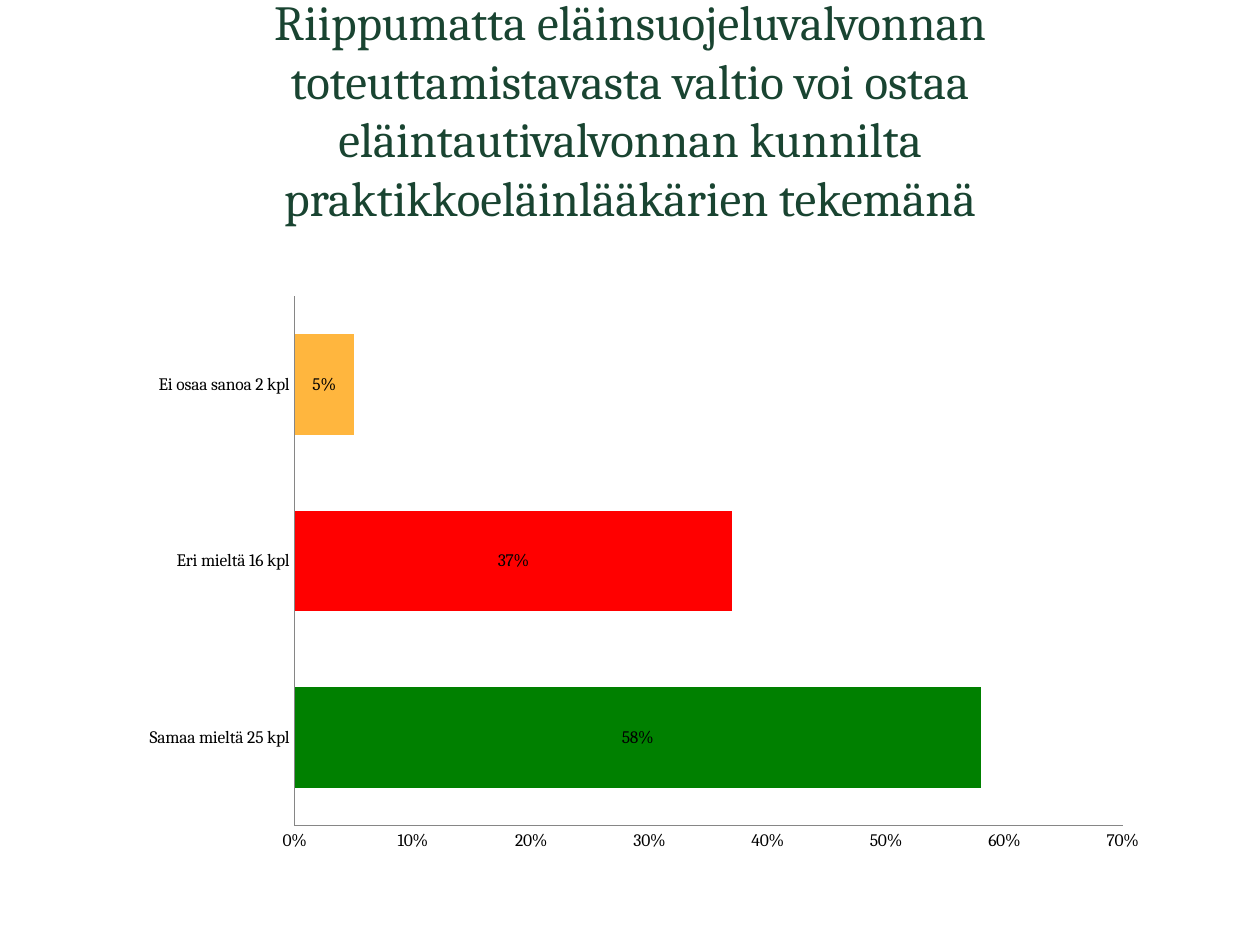
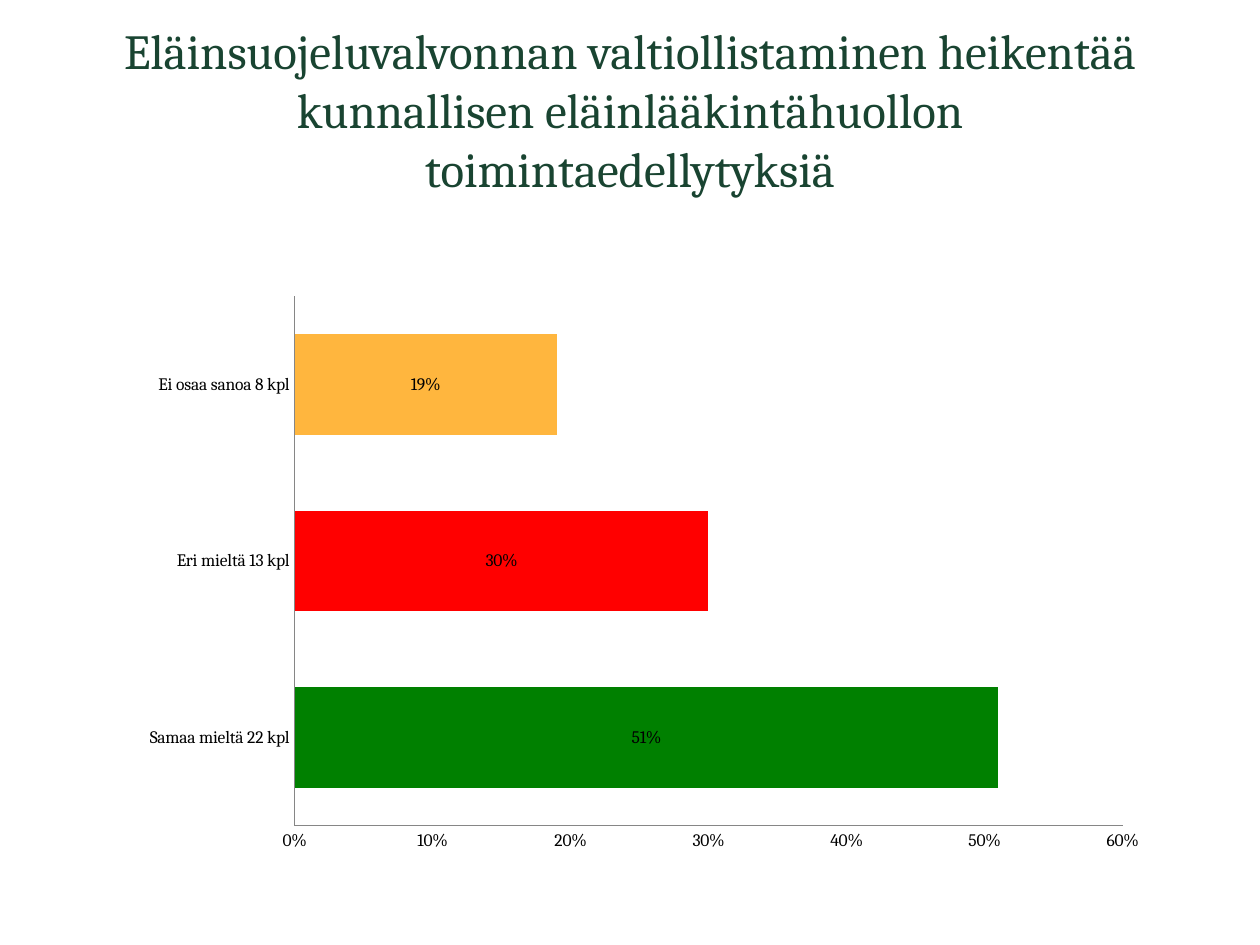
from lxml import etree
from pptx import Presentation
from pptx.chart.data import CategoryChartData
from pptx.dml.color import RGBColor
from pptx.enum import chart as c, text
from pptx.oxml import ns
from pptx.util import Pt

FONT = "Cambria"
TITLE_GREEN = RGBColor(0x19, 0x44, 0x31)
BLACK = RGBColor(0, 0, 0)
AXIS_GREY = RGBColor(0x86, 0x86, 0x86)
AGREE = RGBColor(0x00, 0x80, 0x00)
DISAGREE = RGBColor(0xFF, 0x00, 0x00)
UNSURE = RGBColor(0xFF, 0xB6, 0x3E)

LEFT, WIDTH = Pt(60.5), Pt(599)
TITLE_TOP, TITLE_HEIGHT = Pt(6.5), Pt(111.6)
CHART_TOP, CHART_HEIGHT = Pt(162.7), Pt(329)
PLOT_AREA = {"x": 0.18, "y": 0.02, "w": 0.79, "h": 0.92}

ANSWERS = [("Samaa mieltä", AGREE), ("Eri mieltä", DISAGREE), ("Ei osaa sanoa", UNSURE)]

# Title, answer counts, answer shares, end of the value axis
QUESTIONS = [
    ("Riippumatta eläinsuojeluvalvonnan toteuttamistavasta valtio voi ostaa "
     "eläintautivalvonnan kunnilta praktikkoeläinlääkärien tekemänä",
     (25, 16, 2), (0.58, 0.37, 0.05), 0.7),
    ("Eläinsuojeluvalvonnan valtiollistaminen heikentää kunnallisen "
     "eläinlääkintähuollon toimintaedellytyksiä",
     (22, 13, 8), (0.51, 0.3, 0.19), 0.6),
]


def set_title(slide, wording):
    title = slide.shapes.title
    title.left, title.top, title.width, title.height = LEFT, TITLE_TOP, WIDTH, TITLE_HEIGHT
    frame = title.text_frame
    frame.text = wording
    frame.word_wrap = True
    frame.auto_size = text.MSO_AUTO_SIZE.NONE
    frame.vertical_anchor = text.MSO_ANCHOR.MIDDLE
    para = frame.paragraphs[0]
    para.alignment = text.PP_ALIGN.CENTER
    font = para.runs[0].font
    font.name, font.size, font.color.rgb = FONT, Pt(28), TITLE_GREEN


def fix_plot_area(chart):
    """Place the inner plot area at fixed fractions of the chart."""
    plot_area = chart.plots[0]._element.getparent()
    for old in plot_area.findall(ns.qn("c:layout")):
        plot_area.remove(old)
    layout = etree.Element(ns.qn("c:layout"))
    manual = etree.SubElement(layout, ns.qn("c:manualLayout"))
    settings = {"layoutTarget": "inner", "xMode": "edge", "yMode": "edge", **PLOT_AREA}
    for name, value in settings.items():
        etree.SubElement(manual, ns.qn(f"c:{name}")).set("val", str(value))
    plot_area.insert(0, layout)


def style_axis(axis):
    axis.has_major_gridlines = False
    axis.major_tick_mark = axis.minor_tick_mark = c.XL_TICK_MARK.NONE
    axis.format.line.color.rgb = AXIS_GREY
    axis.format.line.width = Pt(0.75)


def add_answer_chart(slide, counts, shares, axis_end):
    data = CategoryChartData(number_format="0%")
    data.categories = [f"{answer} {count} kpl" for (answer, _), count in zip(ANSWERS, counts)]
    data.add_series("Series 1", shares)
    chart = slide.shapes.add_chart(c.XL_CHART_TYPE.BAR_STACKED, LEFT, CHART_TOP,
                                   WIDTH, CHART_HEIGHT, data).chart
    chart.has_title = chart.has_legend = False
    chart.font.name, chart.font.size, chart.font.color.rgb = FONT, Pt(10), BLACK

    plot = chart.plots[0]
    plot.gap_width, plot.overlap, plot.vary_by_categories = 75, 100, False
    plot.has_data_labels = True
    labels = plot.data_labels
    labels.show_value = True
    labels.number_format, labels.number_format_is_linked = "0%", False
    labels.position = c.XL_LABEL_POSITION.CENTER
    for index, (_, colour) in enumerate(ANSWERS):
        fill = plot.series[0].points[index].format.fill
        fill.solid()
        fill.fore_color.rgb = colour

    style_axis(chart.category_axis)
    style_axis(chart.value_axis)
    scale = chart.value_axis
    scale.minimum_scale, scale.maximum_scale, scale.major_unit = 0, axis_end, 0.1
    scale.tick_labels.number_format = "0%"
    scale.tick_labels.number_format_is_linked = False
    fix_plot_area(chart)


def main():
    deck = Presentation()
    deck.slide_width, deck.slide_height = Pt(720), Pt(540)
    title_only = deck.slide_layouts[5]
    for wording, counts, shares, axis_end in QUESTIONS:
        slide = deck.slides.add_slide(title_only)
        set_title(slide, wording)
        add_answer_chart(slide, counts, shares, axis_end)
    deck.save("out.pptx")


if __name__ == "__main__":
    main()
